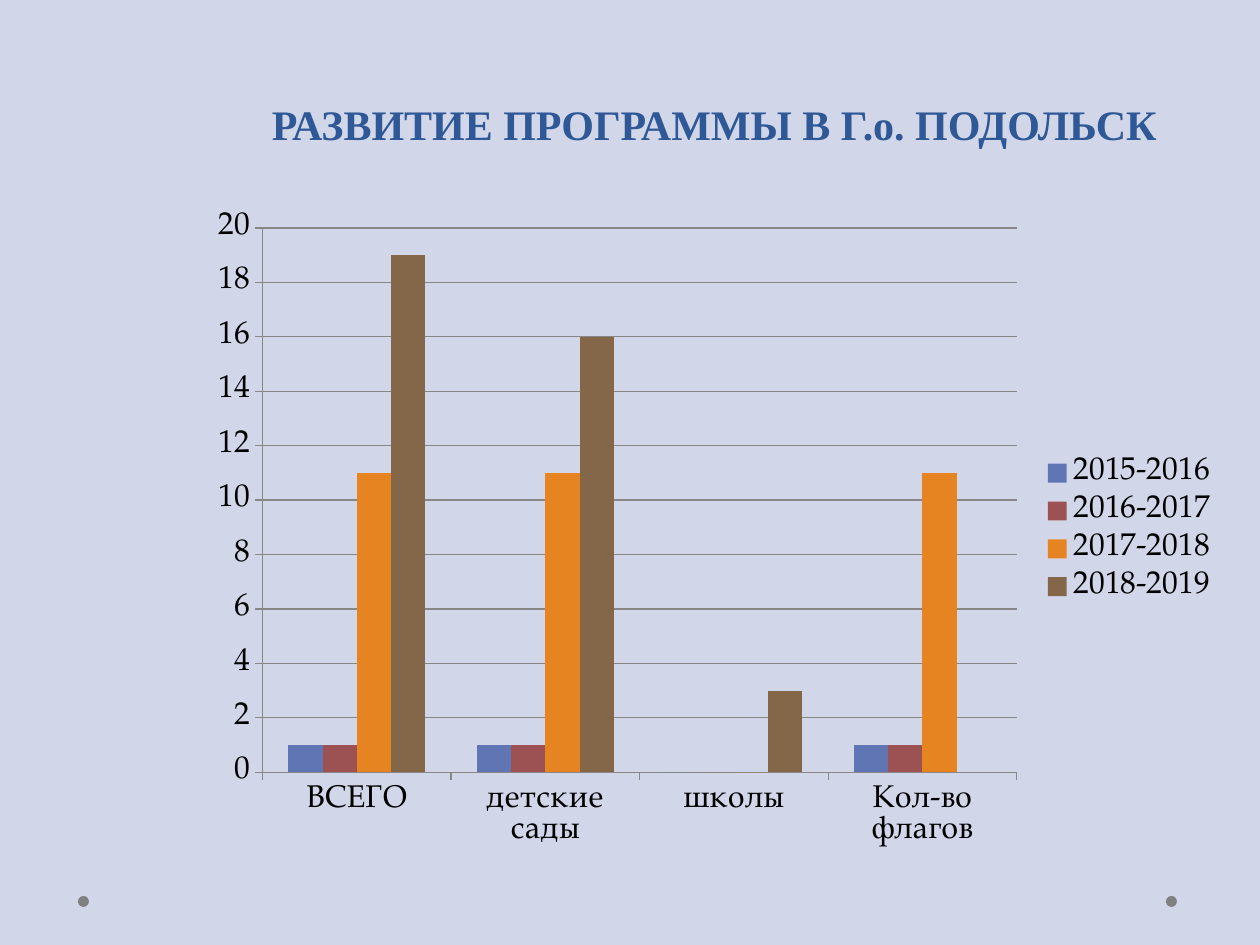
import dataclasses

import pptx
import pptx.chart.data
import pptx.dml.color
import pptx.enum.chart
import pptx.enum.shapes
import pptx.enum.text
import pptx.util

EMU_PER_PX = 914400 / 126
COLORS = {
    "background": "D2D6E9",
    "dot": "808080",
    "title": "2F5897",
    "text": "000000",
    "grid": "878787",
}
CHART_FONT = "TeX Gyre Pagella"
CATEGORIES = ["ВСЕГО", "детские сады", "школы", "Кол-во флагов"]


@dataclasses.dataclass
class Box:
    left: int
    top: int
    width: int
    height: int

    def emu(self) -> list[int]:
        return [px(side) for side in dataclasses.astuple(self)]


@dataclasses.dataclass
class SchoolYear:
    name: str
    values: list
    color: str


YEARS = [
    SchoolYear("2015-2016", [1, 1, 0, 1], "6076B4"),
    SchoolYear("2016-2017", [1, 1, 0, 1], "9C5252"),
    SchoolYear("2017-2018", [11, 11, 0, 11], "E68422"),
    SchoolYear("2018-2019", [19, 16, 3, None], "846648"),
]
DOTS = [Box(left, 896, 11, 11) for left in (1166, 78)]
TITLE_BOX = Box(198, 38, 1033, 117)
CHART_BOX = Box(198, 199, 1033, 662)


def px(length: int) -> int:
    return round(length * EMU_PER_PX)


def rgb(color: str) -> pptx.dml.color.RGBColor:
    return pptx.dml.color.RGBColor.from_string(color)


def paint(fill, color: str) -> None:
    fill.solid()
    fill.fore_color.rgb = rgb(color)


def format_font(font, *, name: str, size: int, color: str, bold: bool = False) -> None:
    font.name = name
    font.size = pptx.util.Pt(size)
    font.bold = bold
    font.color.rgb = rgb(color)


def write_text(frame, text: str, *, align, anchor, line_spacing: int, **font_format) -> None:
    frame.word_wrap = True
    frame.auto_size = pptx.enum.text.MSO_AUTO_SIZE.NONE
    frame.vertical_anchor = anchor
    paragraph = frame.paragraphs[0]
    paragraph.alignment = align
    paragraph.line_spacing = pptx.util.Pt(line_spacing)
    run = paragraph.add_run()
    run.text = text
    format_font(run.font, **font_format)


def draw_dot(slide, box: Box) -> None:
    dot = slide.shapes.add_shape(pptx.enum.shapes.MSO_SHAPE.OVAL, *box.emu())
    dot.shadow.inherit = False
    paint(dot.fill, COLORS["dot"])
    dot.line.fill.background()


def draw_title(slide) -> None:
    title = slide.shapes.title
    title.left, title.top, title.width, title.height = TITLE_BOX.emu()
    write_text(
        title.text_frame,
        "РАЗВИТИЕ ПРОГРАММЫ В Г.о. ПОДОЛЬСК",
        align=pptx.enum.text.PP_ALIGN.CENTER,
        anchor=pptx.enum.text.MSO_ANCHOR.BOTTOM,
        line_spacing=58,
        name="Times New Roman",
        size=24,
        color=COLORS["title"],
        bold=True,
    )


def draw_chart(slide) -> None:
    growth = pptx.chart.data.CategoryChartData()
    growth.categories = CATEGORIES
    for year in YEARS:
        growth.add_series(year.name, year.values)
    chart = slide.shapes.add_chart(
        pptx.enum.chart.XL_CHART_TYPE.COLUMN_CLUSTERED, *CHART_BOX.emu(), growth
    ).chart
    chart.has_title = False
    format_font(chart.font, name=CHART_FONT, size=18, color=COLORS["text"])

    chart.has_legend = True
    chart.legend.position = pptx.enum.chart.XL_LEGEND_POSITION.RIGHT
    chart.legend.include_in_layout = False

    columns = chart.plots[0]
    columns.gap_width = 150
    columns.overlap = 0
    columns.vary_by_categories = False
    for series, year in zip(columns.series, YEARS):
        paint(series.format.fill, year.color)
        series.invert_if_negative = False

    counts = chart.value_axis
    counts.minimum_scale, counts.maximum_scale, counts.major_unit = 0, 20, 2
    counts.has_major_gridlines = True
    for axis in (chart.category_axis, counts):
        axis.major_tick_mark = pptx.enum.chart.XL_TICK_MARK.OUTSIDE
        axis.minor_tick_mark = pptx.enum.chart.XL_TICK_MARK.NONE
    for lines in (chart.category_axis, counts, counts.major_gridlines):
        lines.format.line.color.rgb = rgb(COLORS["grid"])
        lines.format.line.width = pptx.util.Pt(0.75)


def main() -> None:
    presentation = pptx.Presentation()
    presentation.slide_width = px(1260)
    presentation.slide_height = px(945)
    slide = presentation.slides.add_slide(presentation.slide_layouts[5])
    paint(slide.background.fill, COLORS["background"])
    for box in DOTS:
        draw_dot(slide, box)
    draw_title(slide)
    draw_chart(slide)
    presentation.save("out.pptx")


if __name__ == "__main__":
    main()
